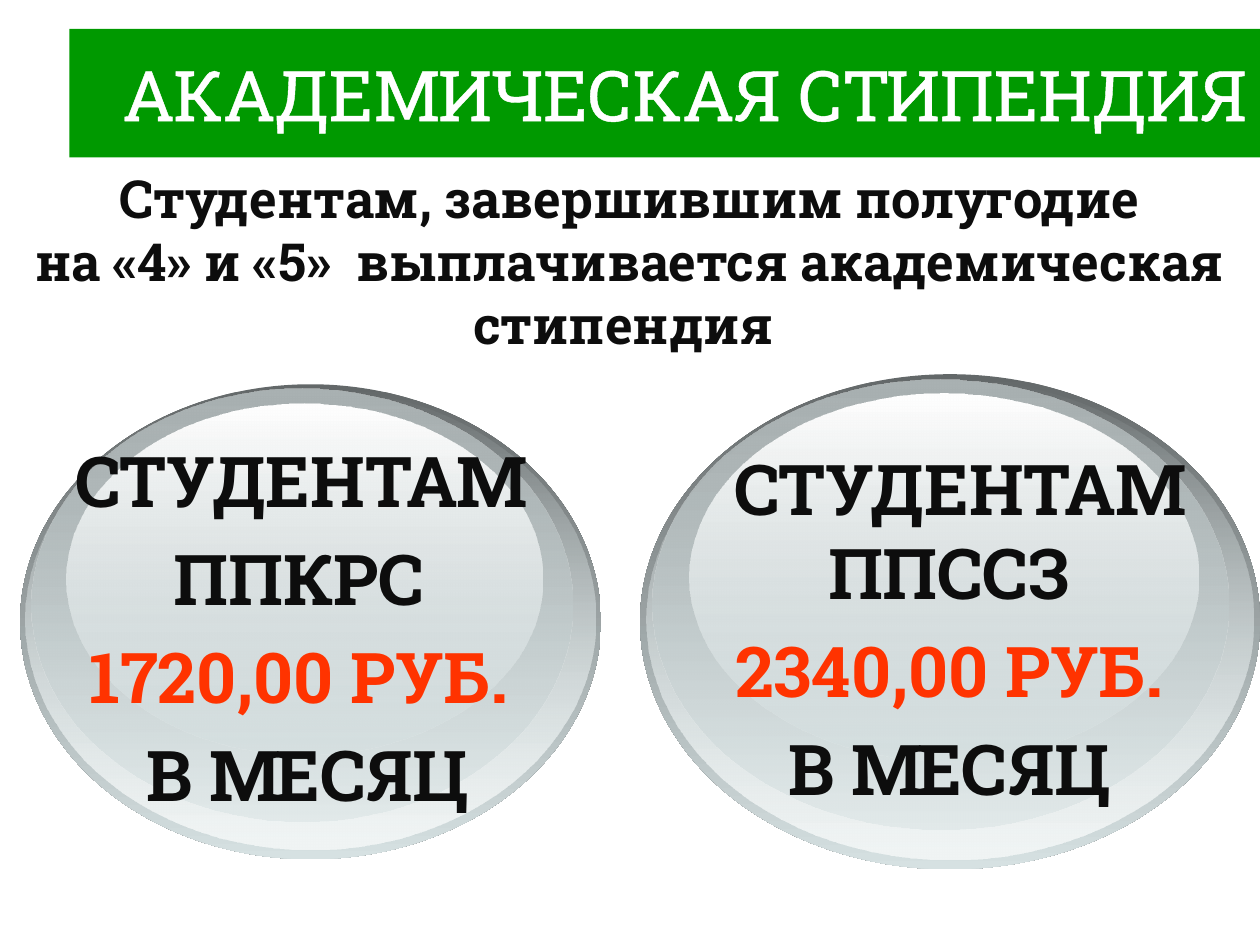
from lxml.etree import SubElement
from pptx import Presentation
from pptx.dml.color import RGBColor
from pptx.enum.shapes import MSO_SHAPE as Shape
from pptx.enum.text import MSO_ANCHOR as Anchor, MSO_AUTO_SIZE as AutoSize, PP_ALIGN as Align
from pptx.oxml import parse_xml
from pptx.oxml.ns import nsdecls, qn
from pptx.util import Inches, Pt

WIDTH, HEIGHT = 10, 7.5
FONT = "Roboto Slab"
GREEN, WHITE, INK, ORANGE = "009900", "FFFFFF", "0D0D0D", "FF3300"
RINGS = [
    ((0, 0, 1, 1), ("636869", 100), ("D6E1E2", 100)),
    ((0.01, 0.01, 0.98, 0.97), ("D6E1E2", 0), ("F1F5F5", 100)),
    ((0.02, 0.01, 0.93, 0.91), ("AAB2B3", 100), ("D6E1E2", 48)),
    ((0.08, 0.04, 0.82, 0.74), ("FFFFFF", 100), ("D6E1E2", 38)),
]
GRANTS = [
    ((5.08, 2.97, 4.92, 3.93), (5.39, 3.49, 4.42, 3.25),
     [("СТУДЕНТАМ ППССЗ ", INK), ("2340,00 РУБ. ", ORANGE), ("В МЕСЯЦ ", INK)]),
    ((0.16, 3.05, 4.61, 3.77), (0.12, 3.42, 4.64, 3.48),
     [("СТУДЕНТАМ ", INK), ("ППКРС ", INK), ("1720,00 РУБ. ", ORANGE), ("В МЕСЯЦ", INK)]),
]


def colour(value):
    """Turn a hex string into a colour."""
    return RGBColor.from_string(value)


def inches(box):
    """Convert left, top, width and height to lengths."""
    return [Inches(length) for length in box]


def write(frame, lines, size, align, bold=True, anchor=Anchor.TOP, gap=0):
    """Fill a text frame with one paragraph for each (text, colour) line."""
    settings = {"word_wrap": True, "auto_size": AutoSize.NONE, "vertical_anchor": anchor}
    for name, value in settings.items():
        setattr(frame, name, value)
    for index, (text, ink) in enumerate(lines):
        para = frame.add_paragraph() if index else frame.paragraphs[0]
        para.alignment = align
        para.space_before = Pt(gap if index else 0)
        span = para.add_run()
        span.text = text
        for name, value in {"name": FONT, "size": Pt(size), "bold": bold}.items():
            setattr(span.font, name, value)
        span.font.color.rgb = colour(ink)


def add_heading(page, box):
    """Place the title over a green bar that runs to the right edge."""
    left, top, width, height = box
    indent = 0.39
    bar = page.shapes.add_shape(
        Shape.RECTANGLE, *inches((left + indent, top, width - indent, height)))
    bar.shadow.inherit = False
    bar.fill.solid()
    bar.fill.fore_color.rgb = colour(GREEN)
    bar.line.fill.background()
    title = page.shapes.title
    title._element.addprevious(bar._element)
    title.left, title.top, title.width, title.height = inches(box)
    write(title.text_frame, [("АКАДЕМИЧЕСКАЯ СТИПЕНДИЯ", WHITE)], 40, Align.RIGHT,
          bold=False, anchor=Anchor.MIDDLE)
    span = title.text_frame.paragraphs[0].runs[0]
    span.font._element.insert(0, parse_xml(
        f'<a:ln {nsdecls("a")} w="{Pt(1.45)}"><a:solidFill>'
        f'<a:srgbClr val="{WHITE}"/></a:solidFill></a:ln>'))


def fade(shape, *stops):
    """Give a shape a top-to-bottom gradient of (colour, opacity) stops."""
    shape.fill.background()
    gradient = parse_xml(f'<a:gradFill {nsdecls("a")} rotWithShape="1"/>')
    stop_list = SubElement(gradient, qn("a:gsLst"))
    for position, (value, opacity) in zip((0, 100000), stops):
        stop = SubElement(stop_list, qn("a:gs"), pos=str(position))
        tint = SubElement(stop, qn("a:srgbClr"), val=value)
        if opacity < 100:
            SubElement(tint, qn("a:alpha"), val=str(opacity * 1000))
    SubElement(gradient, qn("a:lin"), ang="5400000", scaled="1")
    properties = shape._element.spPr
    properties.replace(properties.find(qn("a:noFill")), gradient)


def add_button(page, box):
    """Stack the glossy rings of one oval button inside a box."""
    left, top, width, height = box
    group = page.shapes.add_group_shape()
    for (x, y, across, down), start, end in RINGS:
        ring = group.shapes.add_shape(Shape.OVAL, *inches(
            (left + x * width, top + y * height, across * width, down * height)))
        ring.shadow.inherit = False
        ring.line.fill.background()
        fade(ring, start, end)


def add_text(page, box, lines, size, **options):
    """Place centred bold lines in a box."""
    frame = page.shapes.add_textbox(*inches(box)).text_frame
    write(frame, lines, size, Align.CENTER, **options)


def main():
    """Build and save the slide."""
    deck = Presentation()
    deck.slide_width, deck.slide_height = Inches(WIDTH), Inches(HEIGHT)
    page = deck.slides.add_slide(deck.slide_layouts[5])
    add_heading(page, (0.16, 0.23, 9.84, 1.02))
    for button_box, _, _ in GRANTS:
        add_button(page, button_box)
    for _, text_box, lines in GRANTS:
        add_text(page, text_box, lines, 40, gap=8)
    add_text(page, (0, 1.32, WIDTH, 1.5), [
        ("Студентам, завершившим полугодие", INK),
        ("на «4» и «5»  выплачивается академическая стипендия ", INK),
    ], 30, anchor=Anchor.MIDDLE)
    deck.save("out.pptx")


if __name__ == "__main__":
    main()
